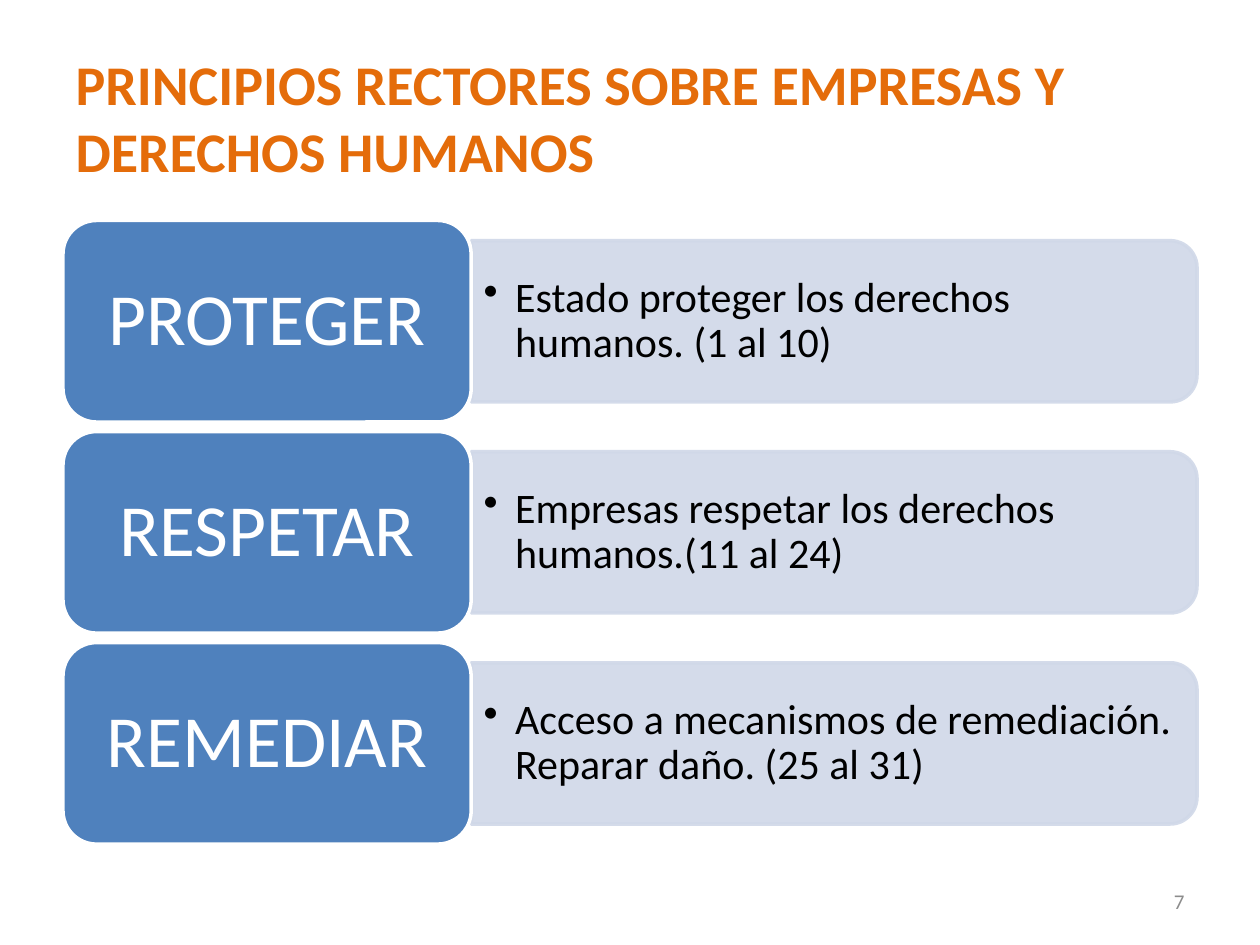
from lxml import etree
from pptx import Presentation
from pptx.dml.color import RGBColor
from pptx.enum import shapes, text
from pptx.oxml import ns
from pptx.util import Inches, Pt

FONT = "Calibri"
ORANGE, BLUE, PALE = "E46C0A", "4F81BD", "D0D8E8"
WHITE, BLACK, GRAY = "FFFFFF", "000000", "8C8C8C"

PRINCIPLES = [
    ("PROTEGER", "Estado proteger los derechos humanos. (1 al 10)"),
    ("RESPETAR", "Empresas respetar los derechos humanos.(11 al 24)"),
    ("REMEDIAR", "Acceso a mecanismos de remediación. Reparar daño. (25 al 31)"),
]


def color(value):
    return RGBColor.from_string(value)


def write(frame, words, size, ink, align, bold=False):
    frame.word_wrap = True
    frame.vertical_anchor = text.MSO_ANCHOR.MIDDLE
    paragraph = frame.paragraphs[0]
    paragraph.alignment = align
    run = paragraph.add_run()
    run.text = words
    run.font.name, run.font.size, run.font.bold = FONT, Pt(size), bold
    run.font.color.rgb = color(ink)
    return paragraph


def paint(shape, fill, line):
    shape.shadow.inherit = False
    shape.fill.solid()
    shape.fill.fore_color.rgb = color(fill)
    shape.line.color.rgb = color(line)
    shape.line.width = Pt(2)


def make_translucent(shape, percent):
    for element in shape.element.spPr.iter(ns.qn("a:srgbClr")):
        etree.SubElement(element, ns.qn("a:alpha"), val=str(percent * 1000))


def add_bullet(paragraph, indent):
    properties = paragraph._p.get_or_add_pPr()
    properties.set("marL", str(indent))
    properties.set("indent", str(-indent))
    etree.SubElement(properties, ns.qn("a:buChar"), char="•")


def add_title(slide, left, top, width, height):
    title = slide.shapes.title
    title.left, title.top, title.width, title.height = left, top, width, height
    write(title.text_frame, "PRINCIPIOS RECTORES SOBRE EMPRESAS Y DERECHOS HUMANOS",
          32, ORANGE, text.PP_ALIGN.LEFT, bold=True)


def add_principle(group, name, detail, left, top, width, height):
    label_width = Inches(3.24)
    panel_left, panel_width = left + label_width, width - label_width
    panel_height = int(height * 0.8)
    middle = top + height // 2

    # Panel: turned a quarter so that its round corners face right
    panel = group.shapes.add_shape(
        shapes.MSO_SHAPE.ROUND_2_SAME_RECTANGLE,
        panel_left + (panel_width - panel_height) // 2, middle - panel_width // 2,
        panel_height, panel_width)
    panel.rotation = 90
    paint(panel, PALE, PALE)
    make_translucent(panel, 90)

    # Detail text, kept upright in its own box
    text_height = Inches(1.15)
    box = group.shapes.add_textbox(panel_left, middle - text_height // 2,
                                   panel_width - Inches(0.06), text_height)
    paragraph = write(box.text_frame, detail, 24, BLACK, text.PP_ALIGN.LEFT)
    paragraph.line_spacing = 0.9
    add_bullet(paragraph, Inches(0.25))

    # Label
    label = group.shapes.add_shape(shapes.MSO_SHAPE.ROUNDED_RECTANGLE,
                                   left, top, label_width, height)
    paint(label, BLUE, WHITE)
    paragraph = write(label.text_frame, name, 42, WHITE, text.PP_ALIGN.CENTER)
    paragraph.line_spacing = 0.9


def add_principles(slide, left, top, width, height):
    group = slide.shapes.add_group_shape()
    row_height = Inches(1.6)
    pitch = (height - row_height) // (len(PRINCIPLES) - 1)
    for row, (name, detail) in enumerate(PRINCIPLES):
        add_principle(group, name, detail, left, top + row * pitch, width, row_height)


def add_page_number(slide, left, top, width, height):
    box = slide.shapes.add_textbox(left, top, width, height)
    write(box.text_frame, "7", 12, GRAY, text.PP_ALIGN.RIGHT)


def main():
    presentation = Presentation()
    presentation.slide_width, presentation.slide_height = Inches(10), Inches(7.5)
    slide = presentation.slides.add_slide(presentation.slide_layouts[5])
    margin, width = Inches(0.5), Inches(9)
    add_title(slide, margin, Inches(0.3), width, Inches(1.25))
    add_principles(slide, margin, Inches(1.75), width, Inches(4.95))
    add_page_number(slide, Inches(7.17), Inches(6.95), Inches(2.33), Inches(0.4))
    presentation.save("out.pptx")


if __name__ == "__main__":
    main()
